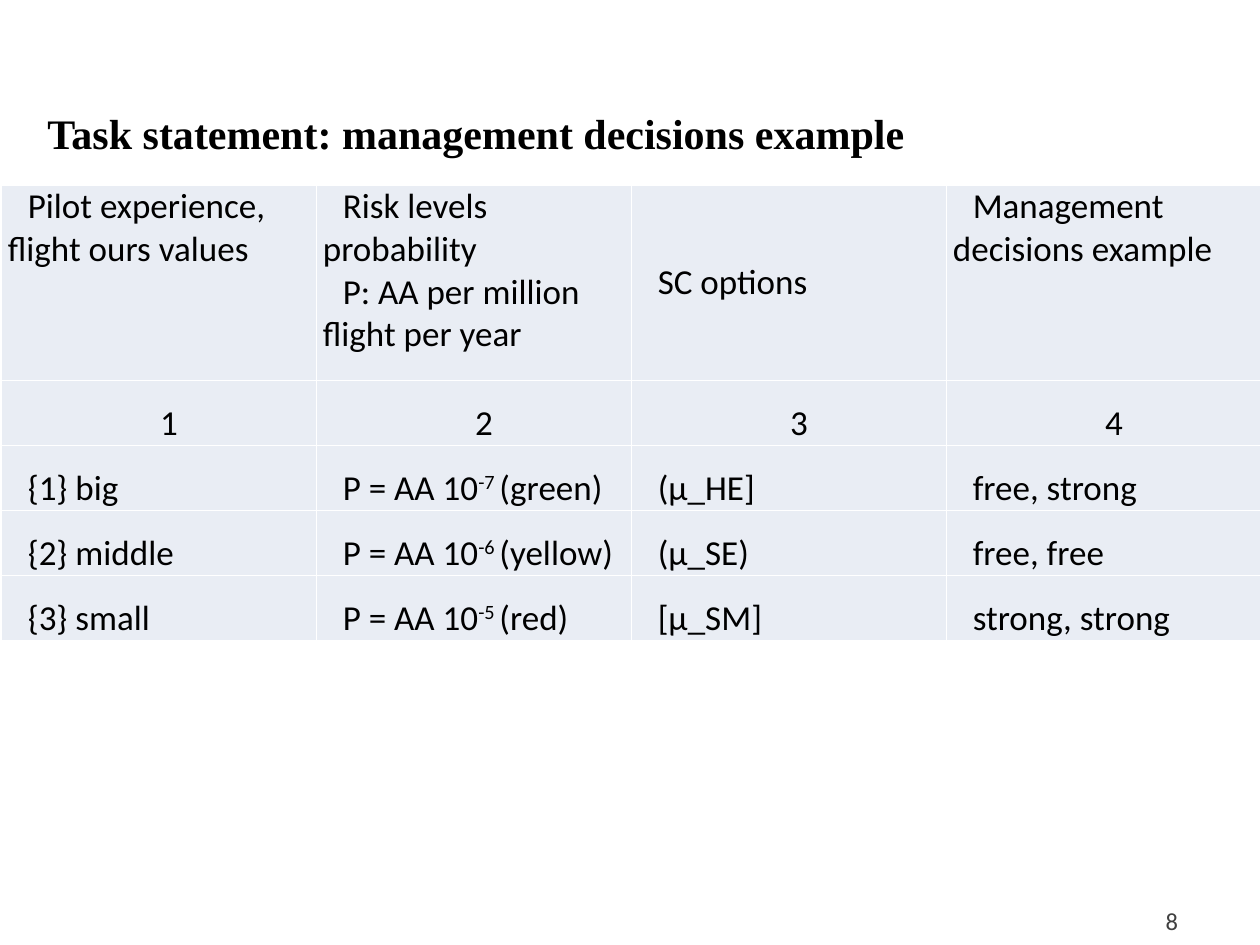
from lxml.etree import SubElement
from pptx import Presentation
from pptx.dml.color import RGBColor
from pptx.enum.text import MSO_ANCHOR, MSO_AUTO_SIZE, PP_ALIGN
from pptx.oxml.ns import qn
from pptx.util import Cm, Pt

BLACK = RGBColor(0x00, 0x00, 0x00)
GRAY = RGBColor(0x40, 0x40, 0x40)
WHITE = RGBColor(0xFF, 0xFF, 0xFF)
PALE = RGBColor(0xE9, 0xED, 0xF4)

HEADER = [
    "Pilot experience, flight ours values",
    "Risk levels probability\nP: AA per million flight per year",
    "SC options",
    "Management decisions example",
]
# Text between bars is superscript
ROWS = [
    ["1", "2", "3", "4"],
    ["{1} big", "P = AA 10|-7 |(green)", "(µ_HE]", "free, strong"],
    ["{2} middle", "P = AA 10|-6 |(yellow)", "(µ_SE)", "free, free"],
    ["{3} small", "P = AA 10|-5 |(red)", "[µ_SM]", "strong, strong"],
]
MIDDLE_CELLS = {(0, 2), (1, 2), (2, 0), (3, 0), (4, 0), (4, 2)}


def write(tf, text, size=20, font="Calibri", color=BLACK, bold=False,
          align=PP_ALIGN.LEFT, spacing=1.0, indent=None):
    """Fill a text frame: one paragraph per line, superscript between bars."""
    for i, line in enumerate(text.split("\n")):
        p = tf.paragraphs[0] if i == 0 else tf.add_paragraph()
        p.alignment = align
        p.line_spacing = spacing
        if indent is not None:
            pPr = p._p.get_or_add_pPr()
            pPr.set("marL", "0")
            pPr.set("indent", str(indent))
        for j, part in enumerate(line.split("|")):
            r = p.add_run()
            r.text = part
            r.font.size = Pt(size)
            r.font.name = font
            r.font.bold = bold
            r.font.color.rgb = color
            if j % 2:
                r._r.get_or_add_rPr().set("baseline", "30000")


class SlideBuilder:
    def __init__(self, s, fill=PALE, border=WHITE):
        self.s = s
        self.fill = fill
        self.border = border

    def title(self, text, left, top, width, height):
        sp = self.s.shapes.title
        sp.left, sp.top, sp.width, sp.height = left, top, width, height
        tf = sp.text_frame
        tf.auto_size = MSO_AUTO_SIZE.NONE
        tf.vertical_anchor = MSO_ANCHOR.TOP
        write(tf, text, size=24, font="Times New Roman", bold=True)

    def page_number(self, text, left, top, width, height):
        tf = self.s.shapes.add_textbox(left, top, width, height).text_frame
        tf.word_wrap = True
        tf.vertical_anchor = MSO_ANCHOR.MIDDLE
        write(tf, text, size=14, color=GRAY, align=PP_ALIGN.RIGHT)

    def borders(self, cell):
        tcPr = cell._tc.get_or_add_tcPr()
        for side in ("lnL", "lnR", "lnT", "lnB"):
            ln = SubElement(tcPr, qn(f"a:{side}"), w=str(Pt(1)))
            solid = SubElement(ln, qn("a:solidFill"))
            SubElement(solid, qn("a:srgbClr"), val=str(self.border))

    def table(self, rows, left, top, col_width, heights):
        cols = len(rows[0])
        table = self.s.shapes.add_table(
            len(rows), cols, left, top, col_width * cols, sum(heights)).table
        table.first_row = table.horz_banding = False
        for col in table.columns:
            col.width = col_width
        for i, (row, height) in enumerate(zip(rows, heights)):
            table.rows[i].height = height
            for j, text in enumerate(row):
                cell = table.cell(i, j)
                cell.margin_left = cell.margin_right = Cm(0.13)
                cell.margin_top = cell.margin_bottom = 0
                if (i, j) in MIDDLE_CELLS:
                    cell.vertical_anchor = MSO_ANCHOR.MIDDLE
                self.borders(cell)
                cell.fill.solid()
                cell.fill.fore_color.rgb = self.fill
                write(cell.text_frame, text, indent=Cm(0.4),
                      align=PP_ALIGN.CENTER if i == 1 else PP_ALIGN.LEFT,
                      spacing=1.5 if i else 1.0)


def main():
    prs = Presentation()
    prs.slide_width, prs.slide_height = Cm(25.4), Cm(19.05)
    s = prs.slides.add_slide(prs.slide_layouts[5])
    builder = SlideBuilder(s)

    # Title
    builder.title("Task statement: management decisions example",
                  Cm(0.7), Cm(2.03), Cm(22.86), Cm(1.12))
    # Decision table
    builder.table([HEADER] + ROWS, Cm(0.03), Cm(3.73), Cm(6.35),
                  [Cm(3.94)] + [Cm(1.31)] * len(ROWS))
    # Slide number
    builder.page_number("8", Cm(18.08), Cm(18.14), Cm(5.92), Cm(0.84))

    prs.save("out.pptx")


if __name__ == "__main__":
    main()
